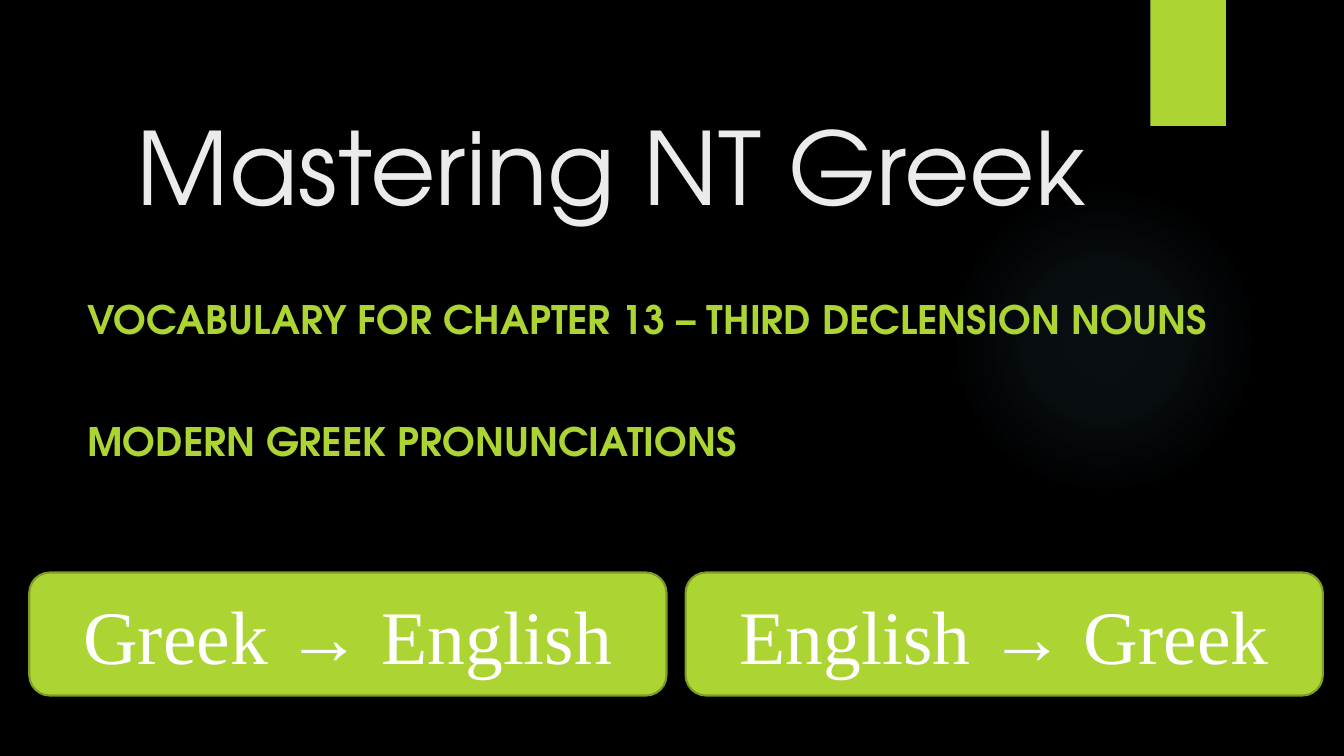
from lxml.etree import SubElement
from pptx import Presentation
from pptx.dml.color import RGBColor
from pptx.enum.shapes import MSO_SHAPE
from pptx.enum.text import MSO_ANCHOR, PP_ALIGN
from pptx.oxml.ns import qn
from pptx.util import Inches, Pt

# Content
TITLE = "Mastering NT Greek"
SUBTITLE = [
    "VOCABULARY FOR CHAPTER 13 – THIRD DECLENSION NOUNS",
    "MODERN GREEK PRONUNCIATIONS",
]
BUTTONS = ["Greek → English", "English → Greek"]

THEME = {
    "background": RGBColor.from_string("000000"),
    "accent": RGBColor.from_string("ACD433"),
    "outline": RGBColor.from_string("7F9D26"),
    "glow": "7AC4F0",
    "glow_stops": [(0, 7), (36, 6), (69, 0)],  # position and opacity, percent
    "title": {"name": "TeX Gyre Adventor", "size": Pt(72), "bold": False,
              "color": RGBColor.from_string("EBEBEB")},
    "subtitle": {"name": "TeX Gyre Adventor", "size": Pt(28), "bold": True,
                 "color": RGBColor.from_string("ACD433")},
    "button": {"name": "Times New Roman", "size": Pt(54), "bold": False,
               "color": RGBColor.from_string("FFFFFF")},
    "subtitle_gap": Pt(53.6),
}

# Layout, in inches
GLOW = (9.41, 1.83, 3.08, 3.08)
RIBBON = (11.41, 0, 0.75, 1.25)
TITLE_AREA = (1.26, 0.7, 10.04, 1.59)
SUBTITLE_AREA = (0.77, 2.88, 11.97, 2.69)
BUTTON_LEFT, BUTTON_TOP, BUTTON_WIDTH, BUTTON_HEIGHT = 0.29, 5.68, 6.32, 1.22
BUTTON_PITCH = 6.51


def inches(area):
    return [Inches(length) for length in area]


def add_solid(page, kind, area):
    shape = page.shapes.add_shape(kind, *inches(area))
    shape.shadow.inherit = False
    shape.fill.solid()
    shape.fill.fore_color.rgb = THEME["accent"]
    shape.line.fill.background()
    return shape


def write(shape, lines, style, anchor, align=PP_ALIGN.LEFT, gap=Pt(0)):
    frame = shape.text_frame
    frame.word_wrap = True
    frame.vertical_anchor = anchor
    for index, line in enumerate(lines):
        para = frame.add_paragraph() if index else frame.paragraphs[0]
        para.alignment = align
        if index:
            para.space_before = gap
        span = para.add_run()
        span.text = line
        for name, value in style.items():
            if name == "color":
                span.font.color.rgb = value
            else:
                setattr(span.font, name, value)


def add_glow(page):
    glow = add_solid(page, MSO_SHAPE.OVAL, GLOW)
    solid = glow.fill._xPr.find(qn("a:solidFill"))
    gradient = solid.makeelement(qn("a:gradFill"), {"rotWithShape": "1"})
    stops = SubElement(gradient, qn("a:gsLst"))
    for position, opacity in THEME["glow_stops"]:
        stop = SubElement(stops, qn("a:gs"), pos=str(position * 1000))
        color = SubElement(stop, qn("a:srgbClr"), val=THEME["glow"])
        SubElement(color, qn("a:alpha"), val=str(opacity * 1000))
    circle = SubElement(gradient, qn("a:path"), {"path": "circle"})
    SubElement(circle, qn("a:fillToRect"),
               {side: "50000" for side in "ltrb"})
    solid.getparent().replace(solid, gradient)


def main():
    deck = Presentation()
    deck.slide_width, deck.slide_height = Inches(13.33), Inches(7.5)
    page = deck.slides.add_slide(deck.slide_layouts[6])
    page.background.fill.solid()
    page.background.fill.fore_color.rgb = THEME["background"]

    # Backdrop
    add_glow(page)
    add_solid(page, MSO_SHAPE.RECTANGLE, RIBBON)

    # Headings
    title = page.shapes.add_textbox(*inches(TITLE_AREA))
    write(title, [TITLE], THEME["title"], MSO_ANCHOR.BOTTOM)
    subtitle = page.shapes.add_textbox(*inches(SUBTITLE_AREA))
    write(subtitle, SUBTITLE, THEME["subtitle"], MSO_ANCHOR.TOP,
          gap=THEME["subtitle_gap"])

    # Direction buttons
    for column, label in enumerate(BUTTONS):
        left = BUTTON_LEFT + column * BUTTON_PITCH
        button = add_solid(page, MSO_SHAPE.ROUNDED_RECTANGLE,
                           (left, BUTTON_TOP, BUTTON_WIDTH, BUTTON_HEIGHT))
        button.line.color.rgb = THEME["outline"]
        button.line.width = Pt(1.5)
        write(button, [label], THEME["button"], MSO_ANCHOR.MIDDLE,
              PP_ALIGN.CENTER)

    deck.save("out.pptx")


if __name__ == "__main__":
    main()
